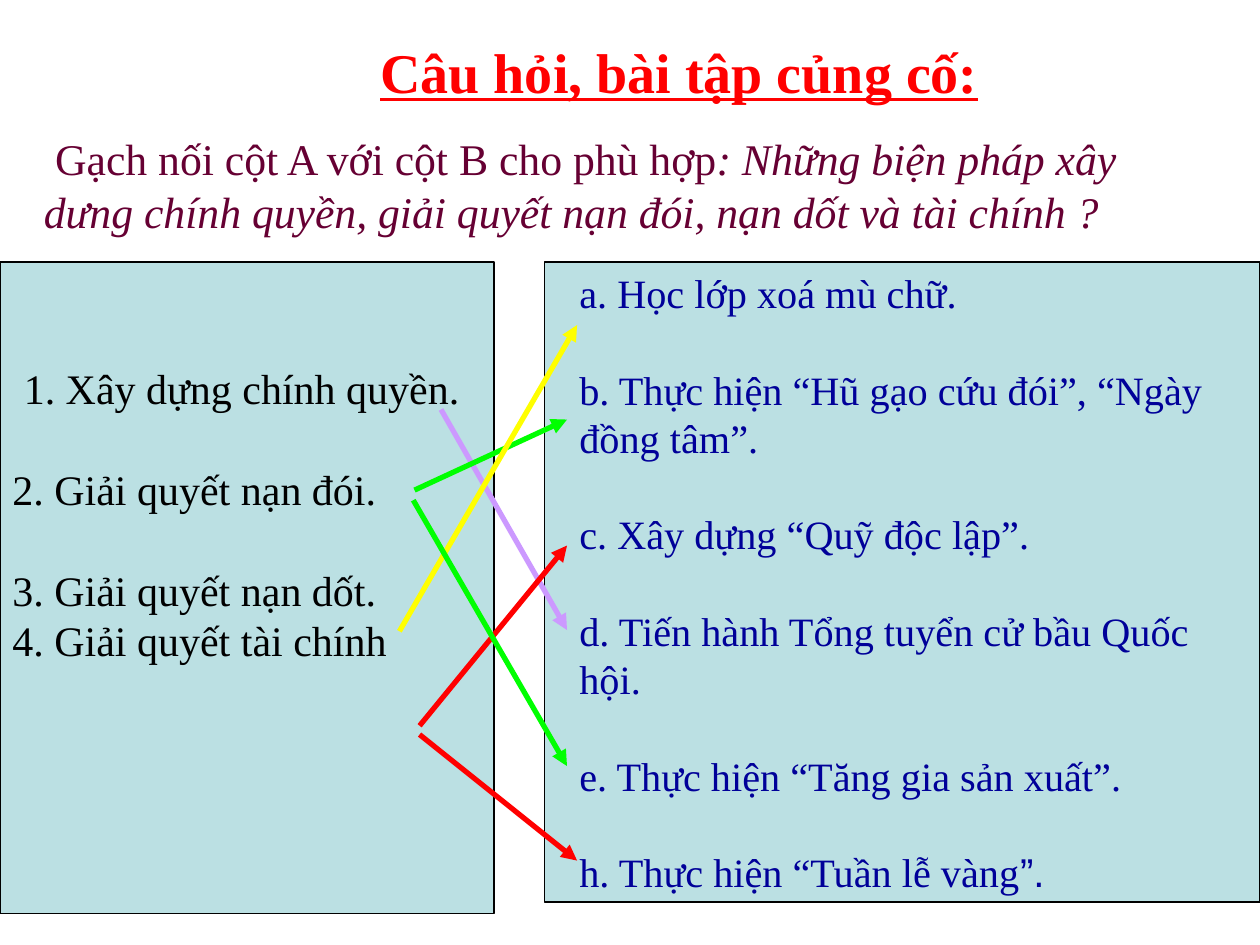
from dataclasses import dataclass

from lxml import etree
from pptx import Presentation
from pptx.dml.color import RGBColor
from pptx.enum.shapes import MSO_CONNECTOR, MSO_SHAPE
from pptx.oxml.ns import qn
from pptx.util import Inches, Pt

RECT = MSO_SHAPE.RECTANGLE
STRAIGHT = MSO_CONNECTOR.STRAIGHT


@dataclass(frozen=True)
class Theme:
    serif: str = "Times New Roman"
    sans: str = "Arial"
    panel: str = "BBE0E3"
    black: str = "000000"
    plum: str = "660033"
    navy: str = "000099"
    red: str = "FF0000"
    green: str = "00FF00"
    yellow: str = "FFFF00"
    violet: str = "CC99FF"
    title: float = 32
    prompt: float = 25
    left: float = 24
    right: float = 23
    border: float = 0.75
    arrow: float = 3


class Builder:
    def __init__(self, slide, theme):
        self.s = slide
        self.t = theme

    def panel(self, *box):
        sp = self.s.shapes.add_shape(RECT, *map(Inches, box))
        sp.shadow.inherit = False
        sp.fill.solid()
        sp.fill.fore_color.rgb = RGBColor.from_string(self.t.panel)
        sp.line.color.rgb = RGBColor.from_string(self.t.black)
        sp.line.width = Pt(self.t.border)

    def text(self, box, paragraphs, size, color, gaps=(0,), indent=0, **fmt):
        tf = self.s.shapes.add_textbox(*map(Inches, box)).text_frame
        tf.word_wrap = True
        for i, runs in enumerate(paragraphs):
            p = tf.paragraphs[0] if i == 0 else tf.add_paragraph()
            p.space_before = Pt(gaps[i])
            if i == 0 and indent:
                p._p.get_or_add_pPr().set("indent", str(Inches(indent)))
            for words, extra in runs:
                r = p.add_run()
                r.text = words
                r.font.color.rgb = RGBColor.from_string(color)
                style = {"name": self.t.serif, "size": Pt(size), **fmt, **extra}
                for key, value in style.items():
                    setattr(r.font, key, value)

    def arrow(self, start, end, color):
        c = self.s.shapes.add_connector(STRAIGHT, *map(Inches, start + end))
        c.line.color.rgb = RGBColor.from_string(color)
        c.line.width = Pt(self.t.arrow)
        etree.SubElement(c.line._get_or_add_ln(), qn("a:tailEnd"), type="triangle")
        etree.SubElement(c._element.spPr, qn("a:effectLst"))


def main():
    prs = Presentation()
    prs.slide_width, prs.slide_height = Inches(10), Inches(7.5)
    t = Theme()
    b = Builder(prs.slides.add_slide(prs.slide_layouts[6]), t)

    b.panel(0, 2.08, 3.92, 5.17)
    b.panel(4.32, 2.08, 5.68, 5.08)

    b.text((2.92, 0.25, 5.17, 0.63), [[("Câu hỏi, bài tập củng cố:", {})]],
           t.title, t.red, bold=True, underline=True)
    b.text((0.25, 1, 9.33, 0.94), [[
        ("Gạch nối cột A với cột B cho phù hợp", {}),
        (": Những biện pháp xây dưng chính quyền, giải quyết nạn đói, "
         "nạn dốt và tài chính ?", {"italic": True}),
    ]], t.prompt, t.plum, indent=0.09)

    tasks = ["1. Xây dựng chính quyền.", "2. Giải quyết nạn đói.",
             "3. Giải quyết nạn dốt.", "4. Giải quyết tài chính"]
    b.text((0, 2.83, 4.08, 3.3), [[(task, {})] for task in tasks],
           t.left, t.black, gaps=(0, 28.8, 28.8, 0), indent=0.09)

    measures = ["a. Học lớp xoá mù chữ.",
                "b. Thực hiện “Hũ gạo cứu đói”, “Ngày đồng tâm”.",
                "c. Xây dựng “Quỹ độc lập”.",
                "d. Tiến hành Tổng tuyển cử bầu Quốc hội.",
                "e. Thực hiện “Tăng gia sản xuất”.",
                "h. Thực hiện “Tuần lễ vàng"]
    answers = [[(measure, {})] for measure in measures]
    answers[-1].append(("”.", {"name": t.sans}))
    b.text((4.5, 2.08, 5.33, 5.08), answers, t.right, t.navy,
           gaps=[0] + [27.6] * (len(answers) - 1))

    matches = [
        ((3.5, 3.25), (4.5, 5), t.violet),
        ((3.33, 5.76), (4.5, 4.33), t.red),
        ((3.33, 5.83), (4.58, 6.83), t.red),
        ((3.29, 3.89), (4.5, 3.33), t.green),
        ((3.17, 5.01), (4.58, 2.58), t.yellow),
        ((3.28, 3.97), (4.5, 6.08), t.green),
    ]
    for match in matches:
        b.arrow(*match)

    prs.save("out.pptx")


if __name__ == "__main__":
    main()
